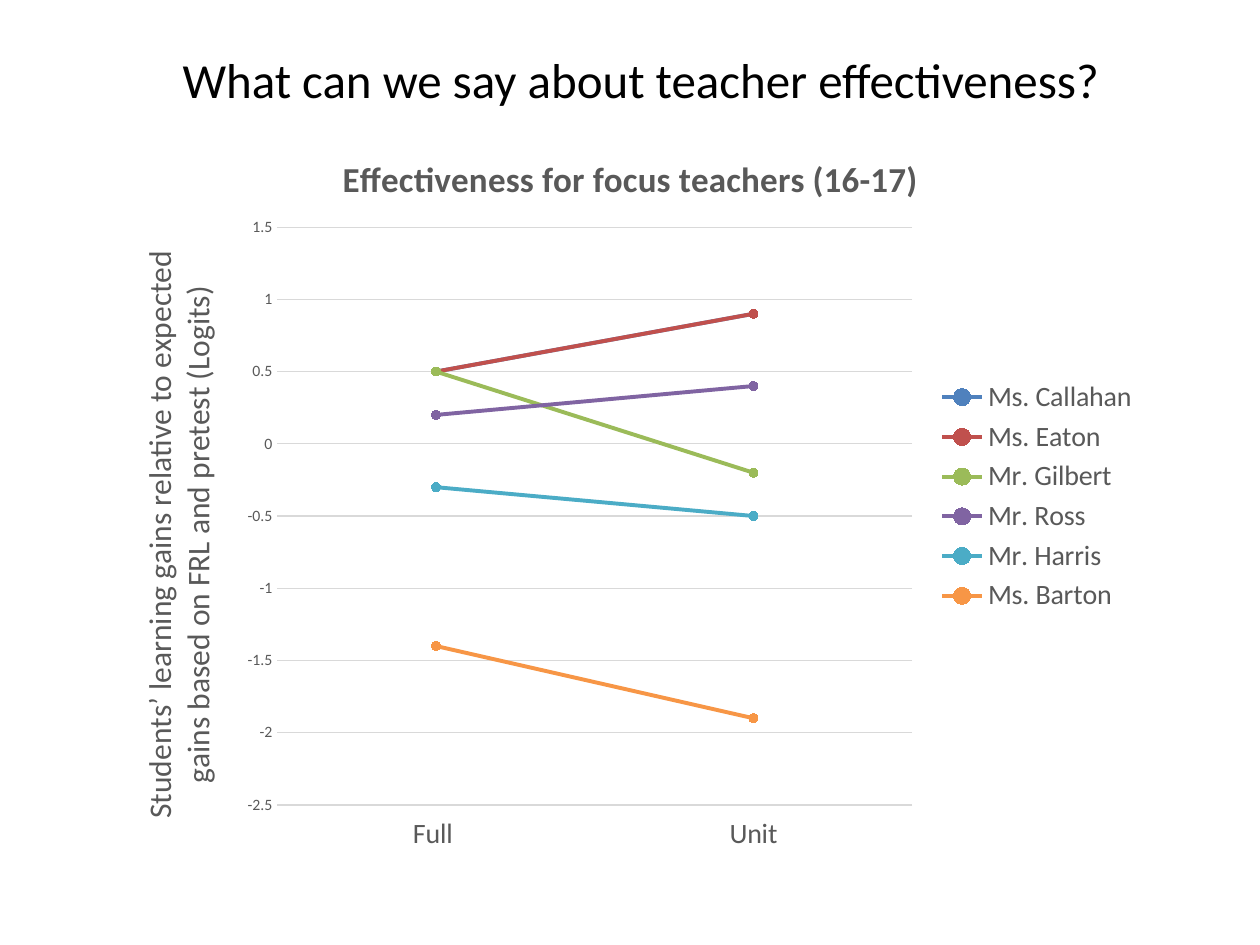
from dataclasses import dataclass

from lxml.etree import SubElement
from pptx import Presentation
from pptx.chart.chart import Chart
from pptx.chart.data import CategoryChartData
from pptx.dml.color import RGBColor
from pptx.enum.chart import (XL_CHART_TYPE, XL_LEGEND_POSITION, XL_MARKER_STYLE,
                             XL_TICK_LABEL_POSITION, XL_TICK_MARK)
from pptx.enum.text import MSO_ANCHOR, PP_ALIGN
from pptx.oxml.ns import qn
from pptx.util import Cm, Length, Pt

FONT = "Calibri"
GRAY = "595959"
GRID = "D9D9D9"
CHART_WIDTH, CHART_HEIGHT = Cm(21), Cm(14.94)


@dataclass(frozen=True)
class Teacher:
    name: str
    full: float
    unit: float
    color: str


# Gains to one decimal, as on the value axis
TEACHERS = [
    Teacher("Ms. Callahan", 0.5, 0.9, "4F81BD"),
    Teacher("Ms. Eaton", 0.5, 0.9, "C0504D"),
    Teacher("Mr. Gilbert", 0.5, -0.2, "9BBB59"),
    Teacher("Mr. Ross", 0.2, 0.4, "8064A2"),
    Teacher("Mr. Harris", -0.3, -0.5, "4BACC6"),
    Teacher("Ms. Barton", -1.4, -1.9, "F79646"),
]


def rgb(value: str) -> RGBColor:
    return RGBColor.from_string(value)


def format_font(font, size: float, color: str = GRAY, bold: bool = False) -> None:
    font.name, font.size, font.bold = FONT, Pt(size), bold
    font.color.rgb = rgb(color)


def write_text(text_frame, text: str, *, size: float, color: str = GRAY,
               bold: bool = False) -> None:
    paragraph = text_frame.paragraphs[0]
    paragraph.alignment = PP_ALIGN.CENTER
    run = paragraph.add_run()
    run.text = text
    format_font(run.font, size, color, bold)


def format_line(line, color: str, width: float) -> None:
    line.color.rgb = rgb(color)
    line.width = Pt(width)


def style_series(series, teacher: Teacher) -> None:
    series.smooth = False
    format_line(series.format.line, teacher.color, 2.25)
    marker = series.marker
    marker.style, marker.size = XL_MARKER_STYLE.CIRCLE, 5
    marker.format.fill.solid()
    marker.format.fill.fore_color.rgb = rgb(teacher.color)
    format_line(marker.format.line, teacher.color, 0.75)


def place_plot(chart: Chart, left: Length, top: Length, width: Length,
               height: Length) -> None:
    """Fix the inner plot area, measured from the chart's corner."""
    plot_area = chart.plots[0]._element.getparent()
    for old_layout in plot_area.findall(qn("c:layout")):
        plot_area.remove(old_layout)
    layout = SubElement(plot_area, qn("c:layout"))
    plot_area.insert(0, layout)
    manual = SubElement(layout, qn("c:manualLayout"))
    settings = {"layoutTarget": "inner", "xMode": "edge", "yMode": "edge",
                "x": left / CHART_WIDTH, "y": top / CHART_HEIGHT,
                "w": width / CHART_WIDTH, "h": height / CHART_HEIGHT}
    for tag, value in settings.items():
        SubElement(manual, qn(f"c:{tag}")).set("val", str(value))


def add_title(slide) -> None:
    box = slide.shapes.add_textbox(Cm(1.27), Cm(0), Cm(23.29), Cm(3.18))
    box.text_frame.word_wrap = True
    box.text_frame.vertical_anchor = MSO_ANCHOR.MIDDLE
    write_text(box.text_frame, "What can we say about teacher effectiveness?",
               size=28, color="000000")


def add_effectiveness_chart(slide) -> None:
    data = CategoryChartData()
    data.categories = ["Full ", "Unit"]
    for teacher in TEACHERS:
        data.add_series(teacher.name, (teacher.full, teacher.unit))
    chart = slide.shapes.add_chart(XL_CHART_TYPE.LINE_MARKERS, Cm(2.21), Cm(2.54),
                                   CHART_WIDTH, CHART_HEIGHT, data).chart
    format_font(chart.font, 10, "000000")
    place_plot(chart, Cm(3.38), Cm(2.04), Cm(12.8), Cm(11.65))
    chart.plots[0].vary_by_categories = False
    for series, teacher in zip(chart.plots[0].series, TEACHERS):
        style_series(series, teacher)

    # Chart title
    chart.has_title = True
    write_text(chart.chart_title.text_frame, "Effectiveness for focus teachers (16-17)",
               size=20, bold=True)
    chart.chart_title.include_in_layout = False

    # Axes
    category_axis, value_axis = chart.category_axis, chart.value_axis
    for axis, size in ((category_axis, 16), (value_axis, 9)):
        axis.major_tick_mark = axis.minor_tick_mark = XL_TICK_MARK.NONE
        format_font(axis.tick_labels.font, size)
    category_axis.tick_label_position = XL_TICK_LABEL_POSITION.LOW
    format_line(category_axis.format.line, GRID, 0.75)
    value_axis.minimum_scale, value_axis.maximum_scale = -2.5, 1.5
    value_axis.major_unit = 0.5
    value_axis.format.line.fill.background()
    value_axis.has_major_gridlines = True
    format_line(value_axis.major_gridlines.format.line, GRID, 0.75)
    write_text(value_axis.axis_title.text_frame,
               "Students’ learning gains relative to expected gains "
               "based on FRL and pretest (Logits)", size=18)

    # Legend
    chart.has_legend = True
    chart.legend.position = XL_LEGEND_POSITION.RIGHT
    chart.legend.include_in_layout = False
    format_font(chart.legend.font, 16)


def main() -> None:
    presentation = Presentation()
    presentation.slide_width, presentation.slide_height = Cm(25.4), Cm(19.05)
    slide = presentation.slides.add_slide(presentation.slide_layouts[6])
    add_title(slide)
    add_effectiveness_chart(slide)
    presentation.save("out.pptx")


if __name__ == "__main__":
    main()
